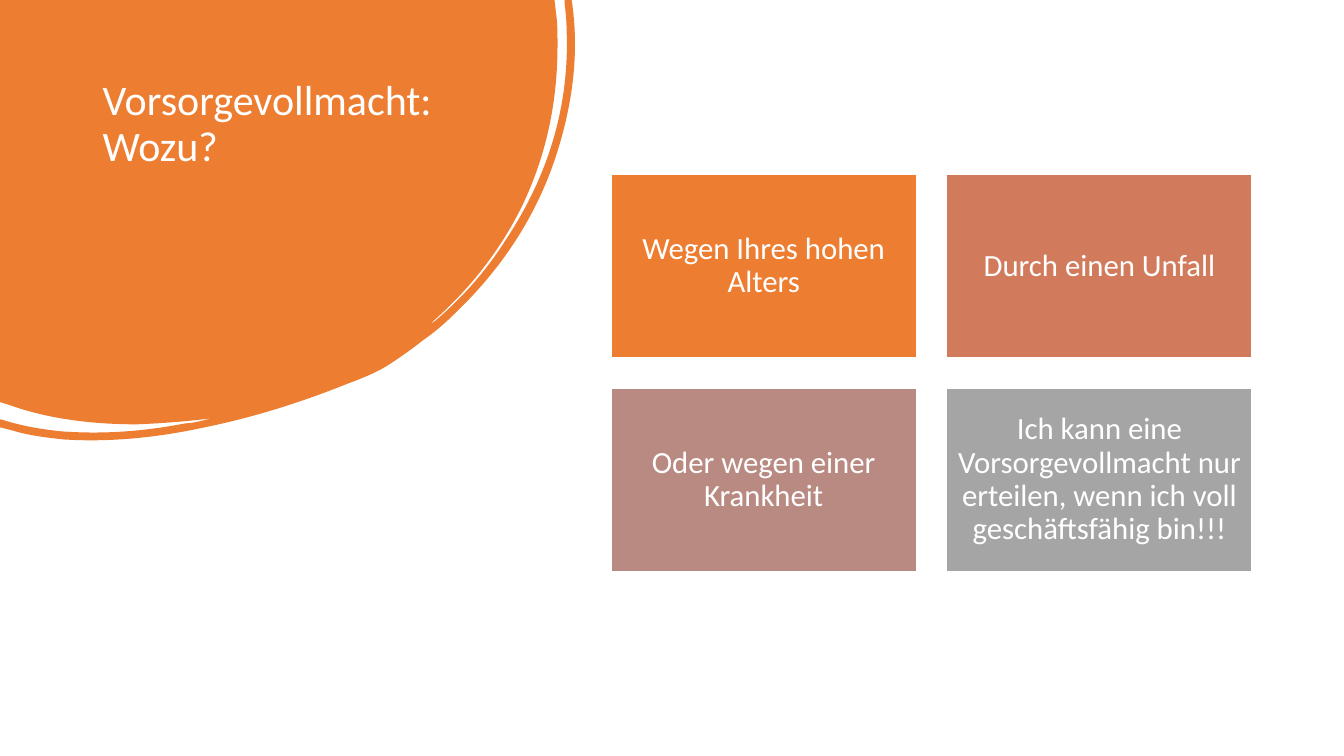
from lxml import etree
from pptx import Presentation
from pptx.dml.color import RGBColor
from pptx.enum.shapes import MSO_SHAPE
from pptx.enum.text import MSO_ANCHOR, PP_ALIGN
from pptx.oxml.ns import qn
from pptx.util import Inches, Pt

RECT = MSO_SHAPE.RECTANGLE
TOP, MIDDLE = MSO_ANCHOR.TOP, MSO_ANCHOR.MIDDLE
LEFT, CENTER = PP_ALIGN.LEFT, PP_ALIGN.CENTER

WHITE = RGBColor(0xFF, 0xFF, 0xFF)
ORANGE = RGBColor(0xED, 0x7D, 0x31)
TERRACOTTA = RGBColor(0xD1, 0x7B, 0x5C)
ROSE = RGBColor(0xB9, 0x8A, 0x82)
GREY = RGBColor(0xA5, 0xA5, 0xA5)

FONT = "Calibri"

REASONS = [
    ("Wegen Ihres hohen Alters", ORANGE),
    ("Durch einen Unfall", TERRACOTTA),
    ("Oder wegen einer Krankheit", ROSE),
    ("Ich kann eine Vorsorgevollmacht nur erteilen, "
     "wenn ich voll geschäftsfähig bin!!!", GREY),
]

# Outline in inches from (0, 0): two values are a line end, six a cubic curve
BLOB_OUTLINE = [
    (5.5, 0), (5.52, 0.17),
    (5.53, 0.26, 5.53, 0.36, 5.53, 0.45),
    (5.53, 1.01, 5.42, 1.54, 5.18, 2.04),
    (4.96, 2.49, 4.65, 2.88, 4.27, 3.21),
    (4.29, 3.21, 4.3, 3.19, 4.32, 3.18),
    (4.59, 2.95, 4.82, 2.69, 5.01, 2.39),
    (5.43, 1.76, 5.65, 1.07, 5.62, 0.3),
    (5.62, 0.21, 5.61, 0.12, 5.6, 0.03),
    (5.6, 0), (5.67, 0), (5.68, 0.07),
    (5.74, 0.54, 5.68, 1.02, 5.53, 1.5),
    (5.33, 2.14, 4.97, 2.68, 4.48, 3.14),
    (4.39, 3.23, 4.29, 3.31, 4.19, 3.38),
    (4.09, 3.46, 3.99, 3.53, 3.87, 3.61),
    (3.75, 3.69, 3.6, 3.75, 3.44, 3.81),
    (2.99, 3.99, 2.52, 4.14, 2.03, 4.24),
    (1.57, 4.34, 1.1, 4.39, 0.63, 4.36),
    (0.45, 4.34, 0.28, 4.32, 0.12, 4.27),
    (0, 4.24), (0, 4.16), (0.04, 4.17),
    (0.23, 4.23, 0.42, 4.26, 0.61, 4.28),
    (1.03, 4.31, 1.43, 4.28, 1.84, 4.2),
    (1.89, 4.2, 1.93, 4.19, 1.98, 4.18),
    (2.02, 4.17, 2.06, 4.16, 2.1, 4.15),
    (1.86, 4.18, 1.61, 4.2, 1.36, 4.21),
    (0.92, 4.21, 0.48, 4.16, 0.07, 4.01),
    (0, 3.99),
]


def write_text(sp, text, size, align=LEFT, anchor=TOP, inset=(0.1, 0.05)):
    tf = sp.text_frame
    tf.word_wrap = True
    tf.vertical_anchor = anchor
    tf.margin_left = tf.margin_right = Inches(inset[0])
    tf.margin_top = tf.margin_bottom = Inches(inset[1])
    p = tf.paragraphs[0]
    p.alignment = align
    p.line_spacing = 0.9
    r = p.add_run()
    r.text = text
    r.font.name = FONT
    r.font.size = Pt(size)
    r.font.color.rgb = WHITE


def bend_segments(sp, outline):
    """Turn the line ends that have control points into cubic curves."""
    ends = list(sp._element.iter(qn("a:lnTo")))
    for end, seg in zip(ends, outline):
        if len(seg) == 6:
            curve = etree.Element(qn("a:cubicBezTo"))
            for px, py in zip(seg[::2], seg[1::2]):
                etree.SubElement(curve, qn("a:pt"),
                                 x=str(Inches(px)), y=str(Inches(py)))
            end.getparent().replace(end, curve)


def add_blob(s, x, y, w, h):
    builder = s.shapes.build_freeform(0, 0)
    builder.add_line_segments(
        [(Inches(seg[-2]), Inches(seg[-1])) for seg in BLOB_OUTLINE])
    sp = builder.convert_to_shape(Inches(x), Inches(y))
    bend_segments(sp, BLOB_OUTLINE)
    # The curves bulge past their end points, so widen the frame
    sp.width, sp.height = Inches(w), Inches(h)
    for frame in sp._element.iter(qn("a:path")):
        frame.set("w", str(sp.width))
        frame.set("h", str(sp.height))
    sp.shadow.inherit = False
    sp.fill.solid()
    sp.fill.fore_color.rgb = ORANGE
    sp.line.fill.background()


def add_title(s, x, y, w, h):
    sp = s.shapes.add_textbox(Inches(x), Inches(y), Inches(w), Inches(h))
    write_text(sp, "Vorsorgevollmacht: Wozu?", 30)


def add_reasons(s, x, y, w, h, cols=2, gap=0.3):
    rows = len(REASONS) // cols
    card_w = (w - gap * (cols - 1)) / cols
    card_h = (h - gap * (rows - 1)) / rows
    for i, (text, color) in enumerate(REASONS):
        row, col = divmod(i, cols)
        sp = s.shapes.add_shape(
            RECT, Inches(x + col * (card_w + gap)),
            Inches(y + row * (card_h + gap)), Inches(card_w), Inches(card_h))
        sp.shadow.inherit = False
        sp.fill.solid()
        sp.fill.fore_color.rgb = color
        sp.line.color.rgb = WHITE
        sp.line.width = Pt(1)
        write_text(sp, text, 22, align=CENTER, anchor=MIDDLE,
                   inset=(0.09, 0.09))


def main():
    prs = Presentation()
    prs.slide_width, prs.slide_height = Inches(13.33), Inches(7.5)
    s = prs.slides.add_slide(prs.slide_layouts[6])
    # Coloured corner with the heading
    add_blob(s, 0, 0, 5.71, 4.37)
    add_title(s, 0.92, 0.74, 3.52, 2.22)
    # Grid of reasons
    add_reasons(s, 6.06, 1.73, 6.36, 3.94)
    prs.save("out.pptx")


if __name__ == "__main__":
    main()
